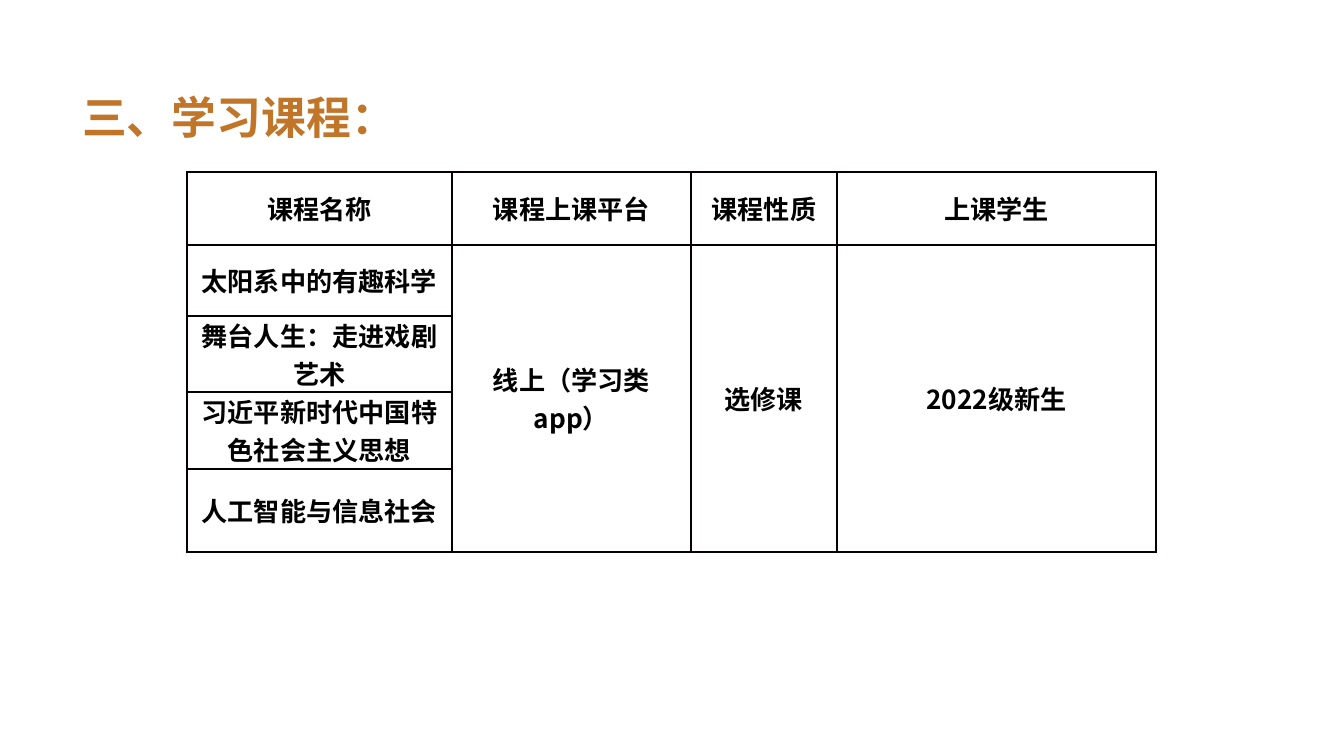
from dataclasses import dataclass

from lxml.etree import SubElement
from pptx import Presentation
from pptx.dml.color import RGBColor
from pptx.enum.text import MSO_ANCHOR, MSO_AUTO_SIZE, PP_ALIGN
from pptx.oxml.ns import qn
from pptx.util import Pt

EMU_PER_PX = 914400 / 134.4


@dataclass(frozen=True)
class Theme:
    font: str = "Noto Sans CJK SC"
    title_color: str = "C17529"
    text_color: str = "000000"
    border_color: str = "080000"
    cell_color: str = "FFFFFF"
    title_size: int = 24
    cell_size: int = 14
    border_width: float = 1.5


THEME = Theme()

COLUMN_WIDTHS = [265, 239, 146, 319]
ROW_HEIGHTS = [73, 71, 76, 77, 83]
HEADERS = ["课程名称", "课程上课平台", "课程性质", "上课学生"]
COURSES = [
    "太阳系中的有趣科学",
    "舞台人生：走进戏剧艺术",
    "习近平新时代中国特色社会主义思想",
    "人工智能与信息社会",
]
SHARED_DETAILS = ["线上（学习类app）", "选修课", "2022级新生"]


def px(n):
    return round(n * EMU_PER_PX)


def write_text(tf, text, *, size, color, align=PP_ALIGN.LEFT, line_spacing=None):
    p = tf.paragraphs[0]
    p.alignment = align
    if line_spacing:
        p.line_spacing = Pt(line_spacing)
    r = p.add_run()
    r.text = text
    r.font.name = THEME.font
    r.font.size = Pt(size)
    r.font.bold = True
    r.font.color.rgb = RGBColor.from_string(color)
    SubElement(r.font._element, qn("a:ea"), typeface=THEME.font)


def add_title(slide, text):
    tf = slide.shapes.add_textbox(px(69), px(71), px(344), px(74)).text_frame
    tf.word_wrap = False
    tf.auto_size = MSO_AUTO_SIZE.SHAPE_TO_FIT_TEXT
    write_text(tf, text, size=THEME.title_size, color=THEME.title_color,
               line_spacing=35)


def set_borders(cell):
    tc_pr = cell._tc.get_or_add_tcPr()
    for side in ("lnL", "lnR", "lnT", "lnB"):
        ln = SubElement(tc_pr, qn(f"a:{side}"), w=str(Pt(THEME.border_width)))
        fill = SubElement(ln, qn("a:solidFill"))
        SubElement(fill, qn("a:srgbClr"), val=THEME.border_color)


def format_cell(cell):
    cell.margin_left = cell.margin_right = px(9)
    cell.margin_top = cell.margin_bottom = 0
    cell.vertical_anchor = MSO_ANCHOR.MIDDLE
    set_borders(cell)
    cell.fill.solid()
    cell.fill.fore_color.rgb = RGBColor.from_string(THEME.cell_color)


def write_cell(cell, text):
    write_text(cell.text_frame, text, size=THEME.cell_size,
               color=THEME.text_color, align=PP_ALIGN.CENTER)


def add_course_table(slide):
    """Courses run down the first column; the other columns share one merged cell."""
    rows, cols = len(ROW_HEIGHTS), len(COLUMN_WIDTHS)
    table = slide.shapes.add_table(
        rows, cols, px(187), px(172),
        px(sum(COLUMN_WIDTHS)), px(sum(ROW_HEIGHTS))).table
    table.first_row = table.horz_banding = False
    for column, width in zip(table.columns, COLUMN_WIDTHS):
        column.width = px(width)
    for row, height in zip(table.rows, ROW_HEIGHTS):
        row.height = px(height)
    for cell in table.iter_cells():
        format_cell(cell)

    for c, header in enumerate(HEADERS):
        write_cell(table.cell(0, c), header)
    for r, course in enumerate(COURSES, start=1):
        write_cell(table.cell(r, 0), course)
    for c, detail in enumerate(SHARED_DETAILS, start=1):
        table.cell(1, c).merge(table.cell(rows - 1, c))
        write_cell(table.cell(1, c), detail)


def main():
    prs = Presentation()
    prs.slide_width, prs.slide_height = px(1344), px(756)
    slide = prs.slides.add_slide(prs.slide_layouts[6])
    add_title(slide, "三、学习课程：")
    add_course_table(slide)
    prs.save("out.pptx")


if __name__ == "__main__":
    main()
